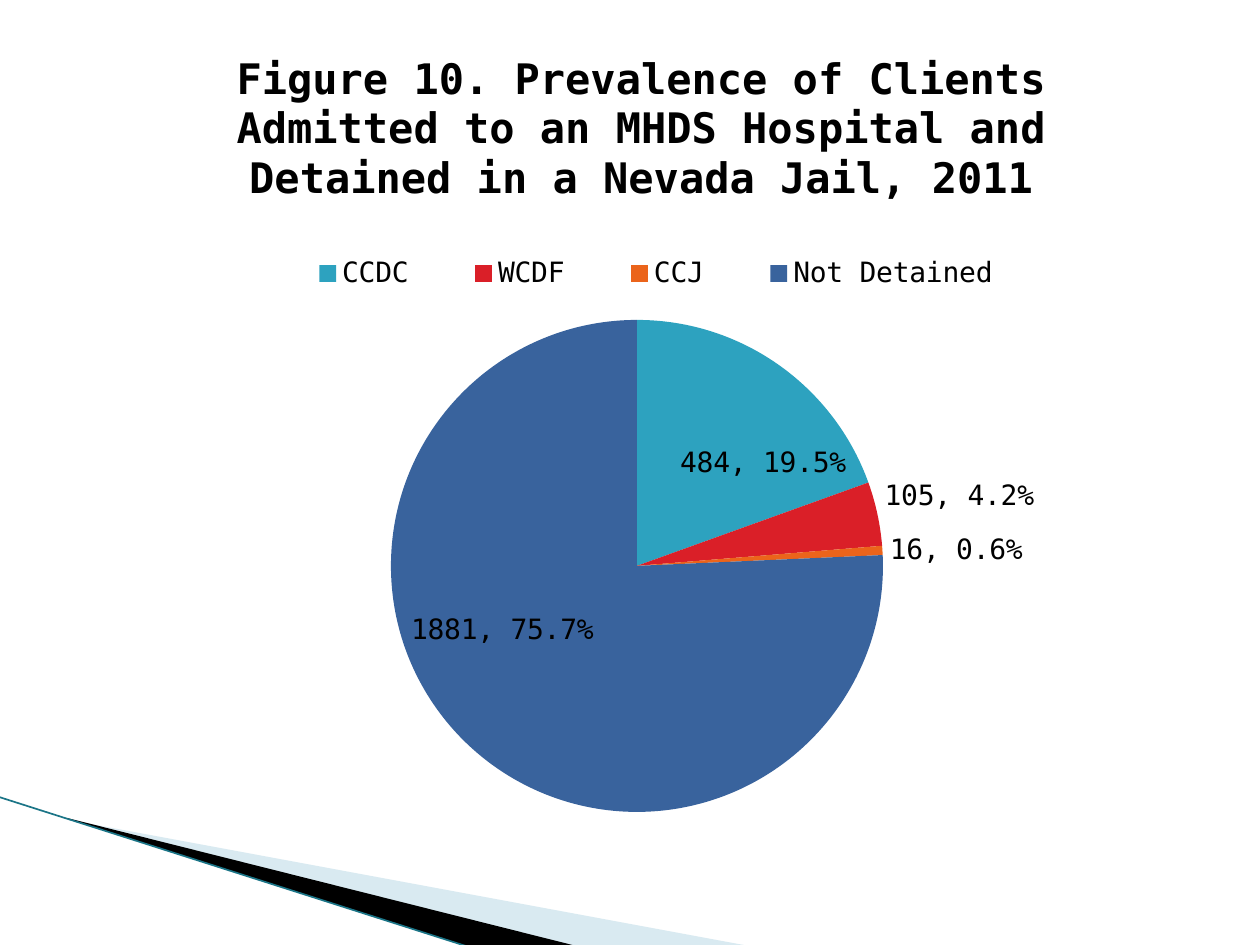
from lxml import etree
from pptx import Presentation
from pptx import util as u
from pptx.chart import data as chart_data
from pptx.dml.color import RGBColor
from pptx.enum import chart as kinds, shapes
from pptx.oxml import ns, parse_xml

SCALE = 914400 / 126  # EMU per px
FONT = "DejaVu Sans Mono"
BLACK = RGBColor(0x00, 0x00, 0x00)
PALE_BLUE = RGBColor(0xA0, 0xCB, 0xDC)
TEAL = RGBColor(0x1B, 0x75, 0x87)

TITLE = ("Figure 10. Prevalence of Clients Admitted to an MHDS Hospital "
         "and Detained in a Nevada Jail, 2011")
INSIDE = kinds.XL_LABEL_POSITION.INSIDE_END
OUTSIDE = kinds.XL_LABEL_POSITION.OUTSIDE_END
# Category, share, label, label position, label shift in px, colour
SLICES = [
    ("CCDC", 0.195, "484, 19.5%", INSIDE, (72, 77), RGBColor(0x2D, 0xA2, 0xBF)),
    ("WCDF", 0.042, "105, 4.2%", OUTSIDE, None, RGBColor(0xDA, 0x1F, 0x28)),
    ("CCJ", 0.006, "16, 0.6%", OUTSIDE, None, RGBColor(0xEB, 0x64, 0x1B)),
    ("Not Detained", 0.757, "1881, 75.7%", INSIDE, (-61, -92), RGBColor(0x39, 0x63, 0x9D)),
]


def px(length):
    return u.Emu(round(length * SCALE))


def set_font(font, size, bold=False):
    values = {"name": FONT, "size": u.Pt(size), "bold": bold}
    for name, value in values.items():
        setattr(font, name, value)
    font.color.rgb = BLACK


def make_layout(size, modes="xy", inner=False, **lengths):
    """Manual chart layout from px lengths inside a chart of the given size."""
    whole = {"x": size[0], "w": size[0], "y": size[1], "h": size[1]}
    parts = '<c:layoutTarget val="inner"/>' if inner else ""
    parts += "".join(f'<c:{name}Mode val="edge"/>' for name in modes)
    parts += "".join(f'<c:{name} val="{length / whole[name]:.4f}"/>'
                     for name, length in lengths.items())
    return parse_xml(f'<c:layout {ns.nsdecls("c")}><c:manualLayout>{parts}'
                     '</c:manualLayout></c:layout>')


def place_layout(parent, layout, before):
    for old in parent.findall(ns.qn("c:layout")):
        parent.remove(old)
    parent.find(ns.qn(before)).addprevious(layout)


def add_wedge(page, left, top, points, color, opacity=100):
    corners = [(left + x, top + y) for x, y in points]
    builder = page.shapes.build_freeform(*corners[0], scale=SCALE)
    builder.add_line_segments(corners[1:], close=True)
    wedge = builder.convert_to_shape()
    wedge.shadow.inherit = False
    wedge.fill.solid()
    wedge.fill.fore_color.rgb = color
    wedge.line.fill.background()
    if opacity < 100:
        tint = wedge.fill._xPr.find(".//" + ns.qn("a:srgbClr"))
        etree.SubElement(tint, ns.qn("a:alpha"), val=str(opacity * 1000))


def add_corner(page, left, top):
    """Slanted wedges and edge line at the bottom left."""
    add_wedge(page, left + 69, top + 23,
              [(0, 0), (680, 126), (506, 126)], PALE_BLUE, 40)
    add_wedge(page, left + 67, top + 21,
              [(0, 0), (509, 128), (402, 129), (1, 1)], BLACK)
    edge = page.shapes.add_connector(
        shapes.MSO_CONNECTOR.STRAIGHT,
        px(left - 1), px(top), px(left + 469), px(top + 150))
    edge.line.color.rgb = TEAL
    edge.line.width = u.Pt(0.95)
    etree.SubElement(edge._element.spPr, ns.qn("a:effectLst"))


def add_pie(page, left, top, width, height):
    size = (width, height)
    values = chart_data.CategoryChartData(number_format="0.0%")
    values.categories = [row[0] for row in SLICES]
    values.add_series("Series 1", [row[1] for row in SLICES])
    chart = page.shapes.add_chart(
        kinds.XL_CHART_TYPE.PIE, px(left), px(top), px(width), px(height), values).chart
    set_font(chart.font, 10)

    # Title
    chart.has_title = True
    chart.chart_title.include_in_layout = False
    frame = chart.chart_title.text_frame
    frame.text = TITLE
    set_font(frame.paragraphs[0].runs[0].font, 24, bold=True)
    place_layout(chart.chart_title._element, make_layout(size, x=166, y=-7), "c:overlay")

    # Legend
    chart.has_legend = True
    chart.legend.position = kinds.XL_LEGEND_POSITION.TOP
    chart.legend.include_in_layout = False
    set_font(chart.legend.font, 16)
    place_layout(chart.legend._element,
                 make_layout(size, x=199, y=202, w=788, h=59), "c:overlay")

    # Slices and their labels
    plot = chart.plots[0]
    plot.vary_by_categories = True
    place_layout(chart._chartSpace.chart.plotArea,
                 make_layout(size, inner=True, x=328, y=218, w=492, h=612), "c:pieChart")
    series = plot.series[0]
    labels = series.data_labels
    labels.show_value = True
    labels.number_format = "0.0%"
    labels.number_format_is_linked = False
    set_font(labels.font, 16)
    for index, (_, _, text, position, shift, color) in enumerate(SLICES):
        point = series.points[index]
        point.format.fill.solid()
        point.format.fill.fore_color.rgb = color
        point.format.line.fill.background()
        label = point.data_label
        label.text_frame.text = text
        set_font(label.text_frame.paragraphs[0].runs[0].font, 16)
        label.position = position
        if shift:
            element = labels._element.findall(ns.qn("c:dLbl"))[index]
            place_layout(element, make_layout(size, modes="", x=shift[0], y=shift[1]), "c:tx")


def main():
    deck = Presentation()
    deck.slide_width, deck.slide_height = px(1260), px(945)
    page = deck.slides.add_slide(deck.slide_layouts[6])
    add_corner(page, 0, 797)
    add_pie(page, 63, 42, 1134, 840)
    deck.save("out.pptx")


if __name__ == "__main__":
    main()
